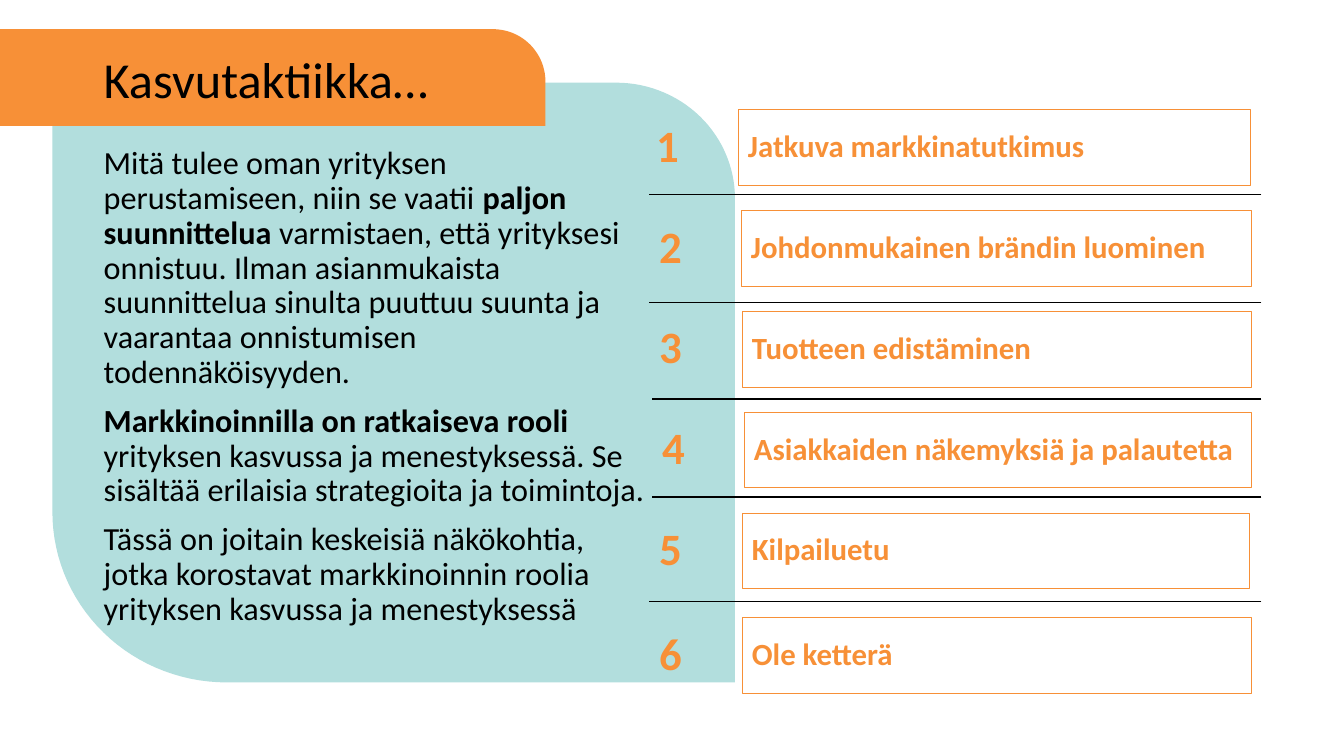
from math import cos, radians, sin

from lxml import etree
from pptx import Presentation
from pptx.dml.color import RGBColor
from pptx.enum.shapes import MSO_CONNECTOR, MSO_SHAPE
from pptx.enum.text import MSO_ANCHOR, PP_ALIGN
from pptx.oxml.ns import qn
from pptx.util import Inches, Pt

RECTANGLE = MSO_SHAPE.RECTANGLE
STRAIGHT = MSO_CONNECTOR.STRAIGHT
MIDDLE, TOP = MSO_ANCHOR.MIDDLE, MSO_ANCHOR.TOP
LEFT = PP_ALIGN.LEFT

FONT = "Calibri"
ORANGE, TEAL, BLACK = "F79037", "B2DEDD", "000000"

TITLE = "Kasvutaktiikka…"
BODY = [
    [("Mitä tulee oman yrityksen perustamiseen, niin se vaatii ", False),
     ("paljon suunnittelua ", True),
     ("varmistaen, että yrityksesi onnistuu. Ilman asianmukaista suunnittelua "
      "sinulta puuttuu suunta ja vaarantaa onnistumisen todennäköisyyden.", False)],
    [("Markkinoinnilla on ratkaiseva rooli ", True),
     ("yrityksen kasvussa ja menestyksessä. Se sisältää erilaisia strategioita "
      "ja toimintoja.", False)],
    [("Tässä on joitain keskeisiä näkökohtia, jotka korostavat markkinoinnin "
      "roolia yrityksen kasvussa ja menestyksessä", False)],
]
# label, top, number left, card left, card right
TACTICS = [
    ("Jatkuva markkinatutkimus", 1.09, 6.41, 7.32, 12.4),
    ("Johdonmukainen brändin luominen", 2.09, 6.44, 7.35, 12.41),
    ("Tuotteen edistäminen", 3.09, 6.44, 7.36, 12.41),
    ("Asiakkaiden näkemyksiä ja palautetta", 4.09, 6.47, 7.38, 12.41),
    ("Kilpailuetu", 5.09, 6.44, 7.36, 12.39),
    ("Ole ketterä", 6.13, 6.44, 7.36, 12.41),
]
ROW_HEIGHT, NUMBER_WIDTH = 0.75, 0.77
DIVIDERS = [(6.44, 1.93), (6.44, 3), (6.47, 3.96), (6.47, 4.93), (6.44, 5.97)]
DIVIDER_RIGHT = 12.51


def color(value):
    return RGBColor.from_string(value)


def corner(center_x, center_y, radius_x, radius_y, start):
    angles = [radians(start + 3 * step) for step in range(31)]
    return [(center_x + radius_x * cos(angle), center_y + radius_y * sin(angle))
            for angle in angles]


def add_panel(slide, points, fill):
    outline = [(Inches(x), Inches(y)) for x, y in points]
    builder = slide.shapes.build_freeform(*outline[0])
    builder.add_line_segments(outline[1:], close=True)
    shape = builder.convert_to_shape()
    shape.shadow.inherit = False
    shape.fill.solid()
    shape.fill.fore_color.rgb = color(fill)
    shape.line.fill.background()


def add_divider(slide, left, y):
    line = slide.shapes.add_connector(
        STRAIGHT, Inches(DIVIDER_RIGHT), Inches(y), Inches(left), Inches(y))
    line.line.color.rgb = color(BLACK)
    line.line.width = Pt(1)
    etree.SubElement(line._element.spPr, qn("a:effectLst"))


def write(shape, paragraphs, size, text_color, anchor=MIDDLE):
    frame = shape.text_frame
    frame.word_wrap = True
    frame.vertical_anchor = anchor
    for index, runs in enumerate(paragraphs):
        paragraph = frame.add_paragraph() if index else frame.paragraphs[0]
        paragraph.alignment = LEFT
        paragraph.line_spacing = 0.9
        paragraph.space_before = Pt(10)
        paragraph.font.name = FONT
        paragraph.font.size = Pt(size)
        paragraph.font.color.rgb = color(text_color)
        for text, bold in runs:
            run = paragraph.add_run()
            run.text = text
            run.font.bold = bold


def add_text(slide, box, *text_style):
    write(slide.shapes.add_textbox(*map(Inches, box)), *text_style)


def add_card(slide, box, label):
    shape = slide.shapes.add_shape(RECTANGLE, *map(Inches, box))
    shape.shadow.inherit = False
    shape.fill.background()
    shape.line.color.rgb = color(ORANGE)
    shape.line.width = Pt(0.75)
    write(shape, [[(label, True)]], 22, ORANGE)


def main():
    """Build the growth tactics slide."""
    presentation = Presentation()
    presentation.slide_width = Inches(13.33)
    presentation.slide_height = Inches(7.5)
    slide = presentation.slides.add_slide(presentation.slide_layouts[6])

    add_panel(slide, [(0.52, 0.82), *corner(6.11, 1.97, 1.18, 1.15, -90),
                      (7.29, 6.77), *corner(2.25, 5.08, 1.73, 1.69, 90)], TEAL)
    add_panel(slide, [(0, 0.29), *corner(4.89, 0.81, 0.52, 0.52, -90),
                      (5.41, 1.25), (0, 1.25)], ORANGE)
    for left, y in DIVIDERS:
        add_divider(slide, left, y)

    add_text(slide, (0.93, 0.42, 5.51, 0.79), [[(TITLE, False)]], 36, BLACK)
    add_text(slide, (0.93, 1.41, 5.65, 5.11), BODY, 23, BLACK, TOP)
    for number, (label, top, number_left, left, right) in enumerate(TACTICS, 1):
        add_text(slide, (number_left, top, NUMBER_WIDTH, ROW_HEIGHT),
                 [[(str(number), True)]], 32, ORANGE)
        add_card(slide, (left, top, right - left, ROW_HEIGHT), label)

    presentation.save("out.pptx")


if __name__ == "__main__":
    main()
